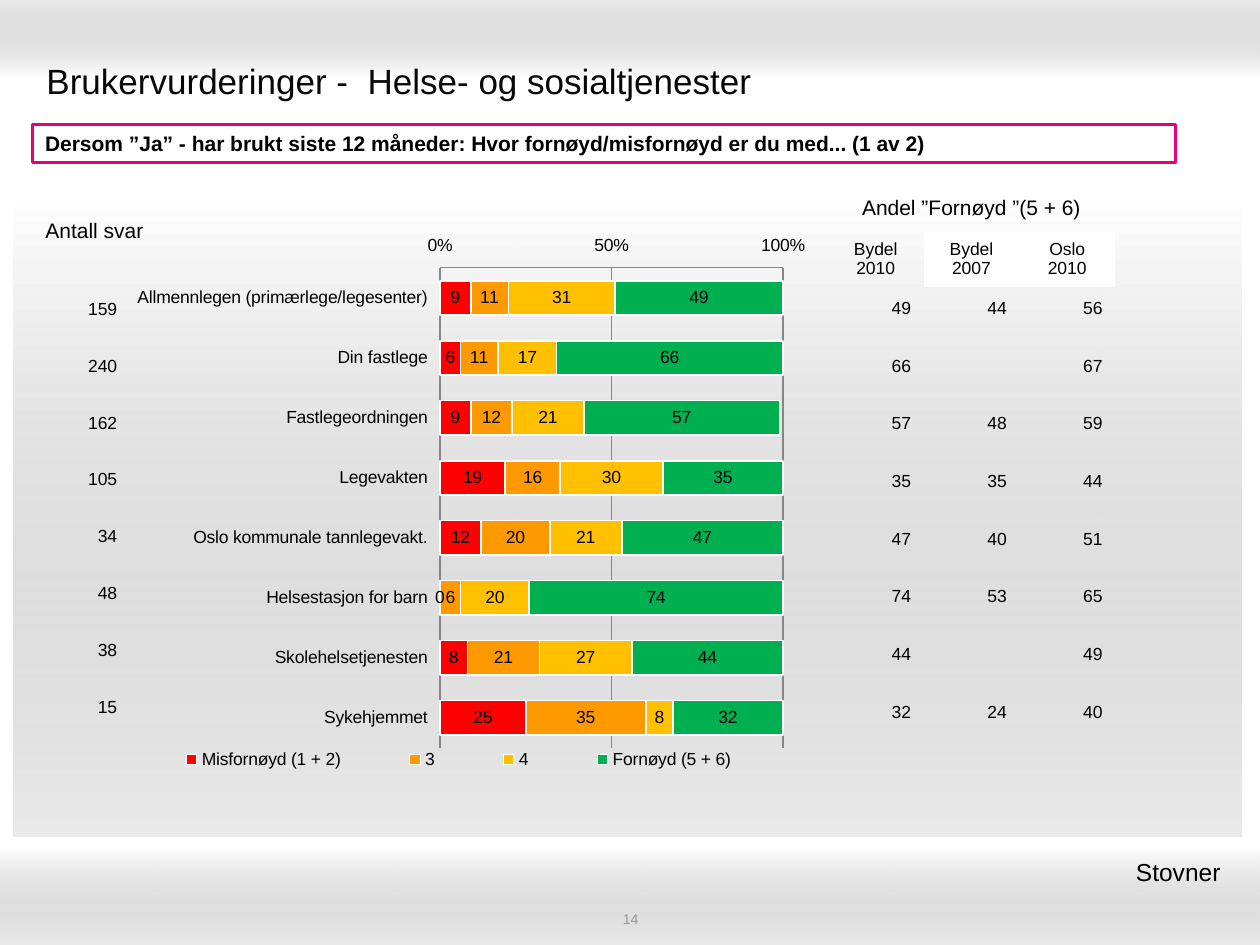
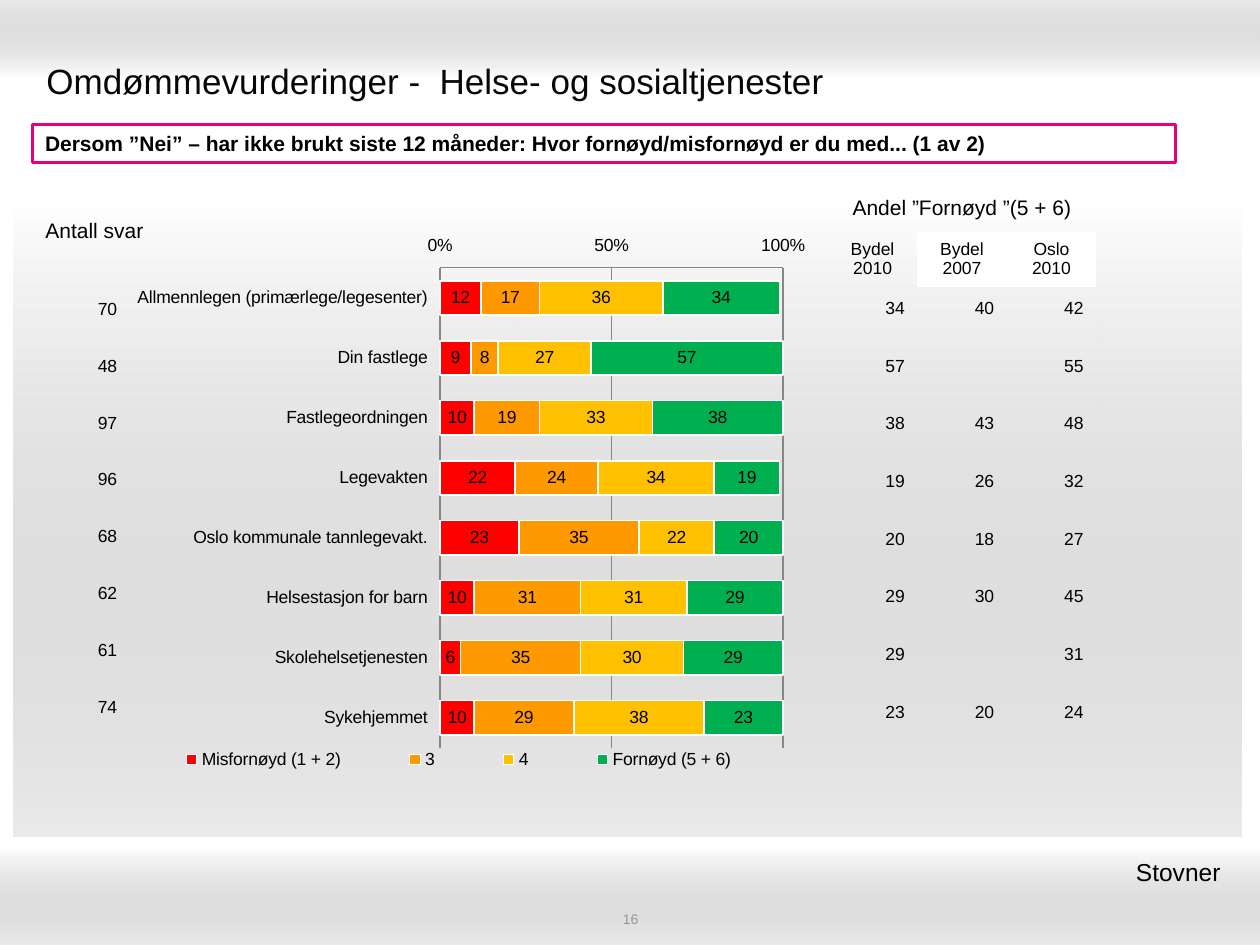
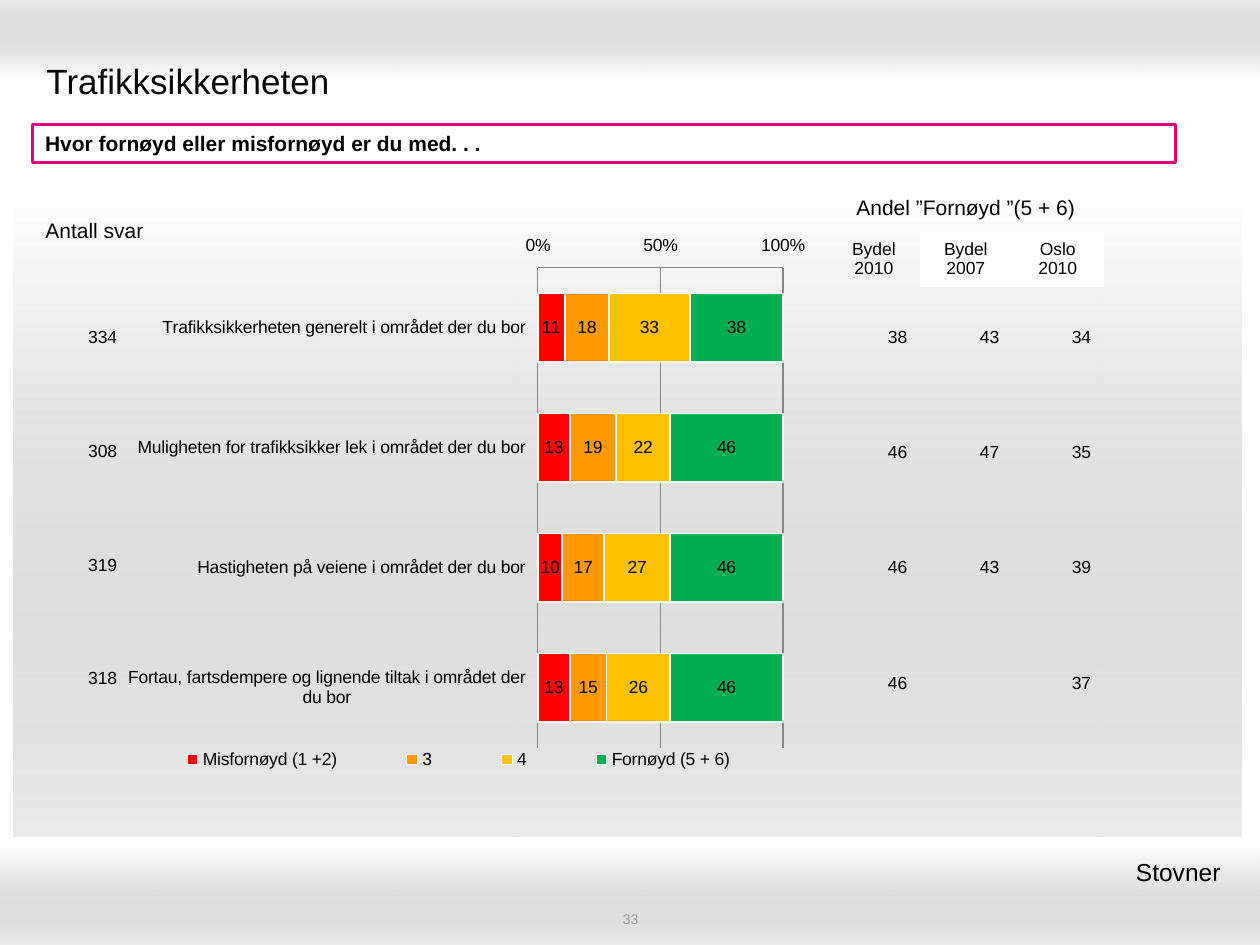
from lxml import etree
from pptx import Presentation
from pptx.chart.data import CategoryChartData
from pptx.dml.color import RGBColor
from pptx.enum.chart import (
    XL_CHART_TYPE, XL_LABEL_POSITION, XL_LEGEND_POSITION as LEGEND_POS,
    XL_TICK_LABEL_POSITION as TICK_LABEL, XL_TICK_MARK as TICK)
from pptx.enum.shapes import MSO_SHAPE as SHAPE
from pptx.enum.text import MSO_ANCHOR as ANCHOR, PP_ALIGN as ALIGN
from pptx.oxml.ns import qn
from pptx.util import Inches, Pt

COLORS = {
    "white": "FFFFFF", "black": "000000", "title": "080808", "band": "999999",
    "number": "969696", "accent": "E7007E", "axis": "868686",
    "bad": "FF0000", "three": "FF9900", "four": "FFC000", "good": "00B050",
}
FONT = "Arial"
PLAIN_TABLE = "{2D5ABB26-0587-4C30-8999-92F81FD0307C}"
BAND_ALPHA = 20000
PLOT_RIGHT = 0.95
TABLE_LEFT = 6.57
SERIES_COLORS = ["bad", "three", "four", "good"]
SHARE_HEADERS = [["Bydel", "2010"], ["Bydel", "2007"], ["Oslo", "2010"]]

# Each row: label, answers, four answer shares, Bydel 2007, Oslo 2010
SLIDES = [
    {
        "title": "Brukervurderinger -  Helse- og sosialtjenester",
        "question": "Dersom ”Ja” - har brukt siste 12 måneder: "
                    "Hvor fornøyd/misfornøyd er du med... (1 av 2)",
        "number": 14, "column": 0.76, "plot_left": 0.456,
        "lowest": "Misfornøyd (1 + 2)",
        "rows": [
            ("Allmennlegen (primærlege/legesenter)", 159, (9, 11, 31, 49), 44, 56),
            ("Din fastlege", 240, (6, 11, 17, 66), "", 67),
            ("Fastlegeordningen", 162, (9, 12, 21, 57), 48, 59),
            ("Legevakten", 105, (19, 16, 30, 35), 35, 44),
            ("Oslo kommunale tannlegevakt.", 34, (12, 20, 21, 47), 40, 51),
            ("Helsestasjon for barn", 48, (0, 6, 20, 74), 53, 65),
            ("Skolehelsetjenesten", 38, (8, 21, 27, 44), "", 49),
            ("Sykehjemmet", 15, (25, 35, 8, 32), 24, 40),
        ],
    },
    {
        "title": "Omdømmevurderinger -  Helse- og sosialtjenester",
        "question": "Dersom ”Nei” – har ikke brukt siste 12 måneder: "
                    "Hvor fornøyd/misfornøyd er du med... (1 av 2)",
        "number": 16, "column": 0.71, "plot_left": 0.456,
        "lowest": "Misfornøyd (1 + 2)",
        "rows": [
            ("Allmennlegen (primærlege/legesenter)", 70, (12, 17, 36, 34), 40, 42),
            ("Din fastlege", 48, (9, 8, 27, 57), "", 55),
            ("Fastlegeordningen", 97, (10, 19, 33, 38), 43, 48),
            ("Legevakten", 96, (22, 24, 34, 19), 26, 32),
            ("Oslo kommunale tannlegevakt.", 68, (23, 35, 22, 20), 18, 27),
            ("Helsestasjon for barn", 62, (10, 31, 31, 29), 30, 45),
            ("Skolehelsetjenesten", 61, (6, 35, 30, 29), "", 31),
            ("Sykehjemmet", 74, (10, 29, 38, 23), 20, 24),
        ],
    },
    {
        "title": "Trafikksikkerheten",
        "question": "Hvor fornøyd eller misfornøyd er du med. . .",
        "number": 33, "column": 0.73, "plot_left": 0.597,
        "lowest": "Misfornøyd (1 +2)",
        "rows": [
            ("Trafikksikkerheten generelt i området der du bor",
             334, (11, 18, 33, 38), 43, 34),
            ("Muligheten for trafikksikker lek i området der du bor",
             308, (13, 19, 22, 46), 47, 35),
            ("Hastigheten på veiene i området der du bor",
             319, (10, 17, 27, 46), 43, 39),
            ("Fortau, fartsdempere og lignende tiltak i området der du bor",
             318, (13, 15, 26, 46), "", 37),
        ],
    },
]


def rgb(name):
    return RGBColor.from_string(COLORS[name])


def set_font(font, size, color="black", **fmt):
    fmt = {"name": FONT, "size": Pt(size), **fmt}
    for key, value in fmt.items():
        setattr(font, key, value)
    font.color.rgb = rgb(color)


def write_lines(tf, lines, size, align=ALIGN.LEFT, **fmt):
    for i, line in enumerate(lines):
        p = tf.paragraphs[0] if i == 0 else tf.add_paragraph()
        p.alignment = align
        r = p.add_run()
        r.text = line
        set_font(r.font, size, **fmt)


def add_text(s, box, text, size, margin=None, **fmt):
    tf = s.shapes.add_textbox(*map(Inches, box)).text_frame
    tf.word_wrap = True
    tf.vertical_anchor = ANCHOR.MIDDLE
    if margin is not None:
        for side in ("left", "right", "top", "bottom"):
            setattr(tf, f"margin_{side}", Inches(margin))
    write_lines(tf, [text], size, **fmt)


def add_rect(s, box):
    sp = s.shapes.add_shape(SHAPE.RECTANGLE, *map(Inches, box))
    sp.shadow.inherit = False
    return sp


def add_band(s, box, angle):
    """Rectangle fading from white to translucent grey."""
    sp = add_rect(s, box)
    sp.line.fill.background()
    sp.fill.gradient()
    sp.fill.gradient_angle = angle
    for stop, color in zip(sp.fill.gradient_stops, ("white", "band")):
        stop.color.rgb = rgb(color)
    last_color = sp._element.spPr.findall(".//" + qn("a:srgbClr"))[-1]
    etree.SubElement(last_color, qn("a:alpha"), val=str(BAND_ALPHA))


def add_question(s, text):
    sp = add_rect(s, (0.26, 0.99, 9.07, 0.3))
    sp.fill.solid()
    sp.fill.fore_color.rgb = rgb("white")
    sp.line.color.rgb = rgb("accent")
    sp.line.width = Pt(2)
    sp.text_frame.word_wrap = True
    sp.text_frame.vertical_anchor = ANCHOR.MIDDLE
    write_lines(sp.text_frame, [text], 12, bold=True)


def add_table(s, left, top, col_width, row_heights, cols=1):
    """Unstyled table with equal columns and no borders."""
    box = (left, top, col_width * cols, sum(row_heights))
    tbl = s.shapes.add_table(len(row_heights), cols, *map(Inches, box)).table
    tbl.first_row = tbl.horz_banding = False
    tbl._tbl.tblPr.find(qn("a:tableStyleId")).text = PLAIN_TABLE
    for col in tbl.columns:
        col.width = Inches(col_width)
    for row, height in zip(tbl.rows, row_heights):
        row.height = Inches(height)
    return tbl


def fill_cell(cell, lines, size=10, align=ALIGN.CENTER, fill=None):
    cell.vertical_anchor = ANCHOR.MIDDLE
    if fill:
        cell.fill.solid()
        cell.fill.fore_color.rgb = rgb(fill)
    else:
        cell.fill.background()
    write_lines(cell.text_frame, lines, size, align)


def add_number_table(s, left, top, col_width, height, rows):
    heights = [height / len(rows)] * len(rows)
    tbl = add_table(s, left, top, col_width, heights, len(rows[0]))
    for r, row in enumerate(rows):
        for c, value in enumerate(row):
            fill_cell(tbl.cell(r, c), [str(value)], align=ALIGN.RIGHT)


def add_share_header(s, col_width):
    tbl = add_table(s, TABLE_LEFT, 1.47, col_width, [0.37, 0.43], 3)
    tbl.cell(0, 0).merge(tbl.cell(0, 2))
    fill_cell(tbl.cell(0, 0), ["Andel ”Fornøyd ”(5 + 6)"], 12)
    for c, lines in enumerate(SHARE_HEADERS):
        fill_cell(tbl.cell(1, c), lines, fill="white" if c else None)


def set_layout(parent, index, inner=False, **area):
    """Place a chart part by fractions of the chart's size."""
    old = parent.find(qn("c:layout"))
    if old is not None:
        parent.remove(old)
    layout = etree.Element(qn("c:layout"))
    manual = etree.SubElement(layout, qn("c:manualLayout"))
    if inner:
        etree.SubElement(manual, qn("c:layoutTarget"), val="inner")
    for key in "xy":
        etree.SubElement(manual, qn(f"c:{key}Mode"), val="edge")
    for key in "xywh":
        etree.SubElement(manual, qn(f"c:{key}"), val=str(round(area[key], 3)))
    parent.insert(index, layout)


def style_axes(chart):
    cat, val = chart.category_axis, chart.value_axis
    cat.reverse_order = True
    cat.major_tick_mark = TICK.NONE
    scale = {"minimum_scale": 0, "maximum_scale": 100, "major_unit": 50,
             "major_tick_mark": TICK.INSIDE, "has_major_gridlines": True}
    for key, value in scale.items():
        setattr(val, key, value)
    val.tick_labels.number_format = r"General\%"
    val.tick_labels.number_format_is_linked = False
    for axis in (cat, val):
        axis.tick_label_position = TICK_LABEL.LOW
        set_font(axis.tick_labels.font, 10)
    for part in (cat, val, val.major_gridlines):
        part.format.line.color.rgb = rgb("axis")
        part.format.line.width = Pt(0.75)


def style_series(plot):
    plot.gap_width, plot.overlap = 75, 100
    plot.vary_by_categories = False
    for series, color in zip(plot.series, SERIES_COLORS):
        series.format.fill.solid()
        series.format.fill.fore_color.rgb = rgb(color)
        series.format.line.color.rgb = rgb("white")
        series.format.line.width = Pt(1)
        labels = series.data_labels
        labels.show_value = True
        labels.number_format = "0"
        labels.number_format_is_linked = False
        labels.position = XL_LABEL_POSITION.CENTER
        set_font(labels.font, 10)


def add_rating_chart(s, rows, lowest, plot_left):
    data = CategoryChartData()
    data.categories = [row[0] for row in rows]
    names = [lowest, "3", "4", "Fornøyd (5 + 6)"]
    for name, values in zip(names, zip(*(row[2] for row in rows))):
        data.add_series(name, values)
    box = map(Inches, (0.98, 1.79, 5.51, 4.54))
    chart = s.shapes.add_chart(XL_CHART_TYPE.BAR_STACKED, *box, data).chart
    chart.has_title = False
    set_font(chart.font, 10)
    style_axes(chart)
    style_series(chart.plots[0])
    chart.has_legend = True
    chart.legend.position = LEGEND_POS.BOTTOM
    chart.legend.include_in_layout = False
    set_font(chart.legend.font, 10)
    set_layout(chart.legend._element, 1, x=0, y=0.905, w=0.966, h=0.058)
    plot_area = chart._chartSpace.chart.plotArea
    set_layout(plot_area, 0, inner=True, x=plot_left, y=0.074,
               w=PLOT_RIGHT - plot_left, h=0.839)


def add_frame(s, title, number):
    """Bands, title, slide number and district name."""
    add_band(s, (0, 0, 10, 0.62), 90)
    add_band(s, (0, 6.72, 10, 0.78), 270)
    add_band(s, (0.11, 1.56, 9.74, 5.08), 270)
    add_text(s, (0.27, 0.36, 9.45, 0.55), title, 20, color="title")
    add_text(s, (3.42, 7.22, 3.17, 0.14), str(number), 8, margin=0,
             align=ALIGN.CENTER, color="number")
    add_text(s, (6.1, 6.75, 3.74, 0.34), "Stovner ", 14, align=ALIGN.RIGHT)


def add_rating_slide(prs, info):
    s = prs.slides.add_slide(prs.slide_layouts[6])
    rows, column = info["rows"], info["column"]
    add_frame(s, info["title"], info["number"])
    add_question(s, info["question"])
    add_rating_chart(s, rows, info["lowest"], info["plot_left"])
    shares = [(values[-1], bydel, oslo) for _, _, values, bydel, oslo in rows]
    add_number_table(s, TABLE_LEFT, 2.22, column, 3.66, shares)
    add_share_header(s, column)
    add_number_table(s, 0.51, 2.23, 0.52, 3.61, [(row[1],) for row in rows])
    fill_cell(add_table(s, 0.04, 1.54, 1.42, [0.59]).cell(0, 0),
              ["Antall svar"], 12)


def main():
    prs = Presentation()
    prs.slide_width, prs.slide_height = Inches(10), Inches(7.5)
    for info in SLIDES:
        add_rating_slide(prs, info)
    prs.save("out.pptx")


if __name__ == "__main__":
    main()
